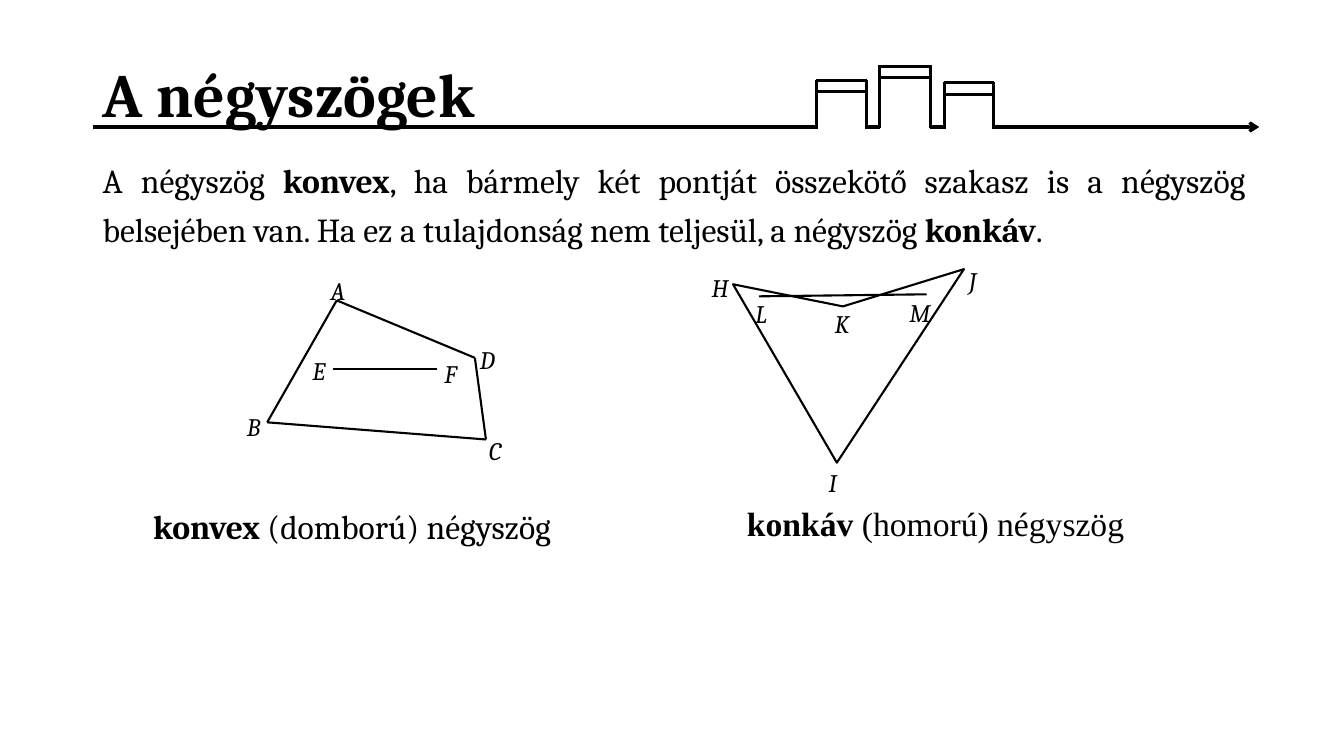
from lxml import etree
from pptx import Presentation
from pptx import util as u
from pptx.dml.color import RGBColor
from pptx.enum import text
from pptx.oxml import ns

BLACK = RGBColor(0x00, 0x00, 0x00)
WHITE = RGBColor(0xFF, 0xFF, 0xFF)
COLUMNS, ROWS = 133.3, 75

BODY = {"size": u.Pt(24), "name": "Cambria"}
SERIF = {"size": u.Pt(24), "name": "Times New Roman"}
HEADING = {"size": u.Pt(44), "name": "Cambria", "bold": True}
LETTER = {"size": u.Pt(18), "name": "Cambria", "italic": True}
LETTER_SIZE = (5.2, 4.8)


class Board:
    def __init__(self, presentation):
        self.column = presentation.slide_width / COLUMNS
        self.row = presentation.slide_height / ROWS
        self.slide = presentation.slides.add_slide(presentation.slide_layouts[5])
        self.shapes = self.slide.shapes

    def point(self, column, row):
        return round(column * self.column), round(row * self.row)

    def group(self):
        self.shapes = self.slide.shapes.add_group_shape().shapes

    def fill_text(self, shape, parts, font, frame=None, paragraph=None):
        text_frame = shape.text_frame
        text_frame.word_wrap = True
        text_frame.auto_size = text.MSO_AUTO_SIZE.NONE
        for key, value in (frame or {}).items():
            setattr(text_frame, key, value)
        target = text_frame.paragraphs[0]
        for key, value in (paragraph or {}).items():
            setattr(target, key, value)
        for words, bold in parts:
            run = target.add_run()
            run.text = words
            for key, value in {"bold": bold, **font}.items():
                setattr(run.font, key, value)
            run.font.color.rgb = BLACK

    def title(self, words, place, size):
        shape = self.slide.shapes.title
        shape.left, shape.top = self.point(*place)
        shape.width, shape.height = self.point(*size)
        self.fill_text(shape, [(words, True)], HEADING,
                       {"vertical_anchor": text.MSO_ANCHOR.MIDDLE},
                       {"alignment": text.PP_ALIGN.LEFT, "line_spacing": 1.5})

    def text_box(self, parts, place, size, font, frame=None, paragraph=None):
        shape = self.shapes.add_textbox(*self.point(*place), *self.point(*size))
        self.fill_text(shape, parts, font, frame, paragraph)

    def letter(self, letter, place):
        self.text_box([(letter, False)], place, LETTER_SIZE, LETTER,
                      paragraph={"line_spacing": 1.15, "space_after": u.Pt(10)})

    def line(self, start, end, weight=1.5, arrow=False):
        connector = self.shapes.add_connector(1, *self.point(*start), *self.point(*end))
        connector.line.color.rgb = BLACK
        connector.line.width = u.Pt(weight)
        if arrow:
            outline = connector.line._get_or_add_ln()
            etree.SubElement(outline, ns.qn("a:tailEnd"), type="arrow")
        etree.SubElement(connector._element.spPr, ns.qn("a:effectLst"))

    def polygon(self, corners):
        first, *others = [self.point(*corner) for corner in corners]
        builder = self.shapes.build_freeform(*first)
        builder.add_line_segments(others, close=True)
        shape = builder.convert_to_shape()
        shape.shadow.inherit = False
        shape.fill.solid()
        shape.fill.fore_color.rgb = WHITE
        shape.line.color.rgb = BLACK
        shape.line.width = u.Pt(1.5)

    def skyline(self, start, end, ground, towers, weight=2.25):
        self.group()
        position = start
        for left, right, roof, ledge in towers:
            self.line((position, ground), (left + 0.1, ground), weight)
            for wall in (left, right):
                self.line((wall, ground + 0.1), (wall, roof - 0.1), weight)
            for level in (roof, ledge):
                self.line((left - 0.1, level), (right + 0.1, level), weight)
            position = right - 0.1
        self.line((position, ground), (end, ground), weight, arrow=True)


def main():
    presentation = Presentation()
    presentation.slide_width = u.Inches(13.33)
    presentation.slide_height = u.Inches(7.5)
    board = Board(presentation)

    board.title("A négyszögek", (9.2, 0.1), (115, 14.5))
    definition = [
        ("A négyszög ", False), ("konvex", True),
        (", ha bármely két pontját összekötő szakasz is a négyszög belsejében van. "
         "Ha ez a tulajdonság nem teljesül, a négyszög ", False),
        ("konkáv", True), (".", False),
    ]
    board.text_box(definition, (9.2, 14.6), (115.3, 51.3), BODY,
                   paragraph={"alignment": text.PP_ALIGN.JUSTIFY,
                              "line_spacing": 1.2, "space_before": u.Pt(10)})

    captions = [
        ("konvex", " (domború) négyszög", (14.2, 49.7), (43.6, 5), BODY),
        ("konkáv", " (homorú) négyszög", (73.1, 49.4), (39.8, 5), SERIF),
    ]
    for term, rest, place, size, font in captions:
        board.text_box([(term, True), (rest, False)], place, size, font,
                       {"word_wrap": False,
                        "auto_size": text.MSO_AUTO_SIZE.SHAPE_TO_FIT_TEXT})

    board.group()
    convex = [(33.4, 29.8), (26.5, 41.9), (48.2, 43.6), (47.1, 35.5)]
    for start, end in zip(convex, convex[1:] + convex[:1]):
        board.line(start, end)
    board.line((33, 36.6), (43.3, 36.6))
    convex_letters = {"A": (31.8, 26.4), "B": (23.5, 39.9), "C": (47.5, 42.2),
                      "D": (46.6, 33.2), "E": (30, 34.3), "F": (43.1, 34.6)}
    for letter, place in convex_letters.items():
        board.letter(letter, place)

    board.group()
    board.polygon([(72.7, 28.2), (83, 45.9), (95.6, 26.7), (83.6, 30.4)])
    board.line((75.3, 29.4), (91.9, 29.2))
    concave_letters = {"H": (69.6, 26.1), "J": (95.1, 25.4), "I": (81.2, 45.4),
                       "K": (81.8, 29.6), "L": (73.9, 28.7), "M": (89.2, 28.6)}
    for letter, place in concave_letters.items():
        board.letter(letter, place)

    towers = [(81, 85.9, 8, 9.1), (87.2, 92.3, 6.6, 7.7), (93.7, 98.5, 8.2, 9.4)]
    board.skyline(9.2, 124.9, 12.6, towers)
    presentation.save("out.pptx")


if __name__ == "__main__":
    main()
